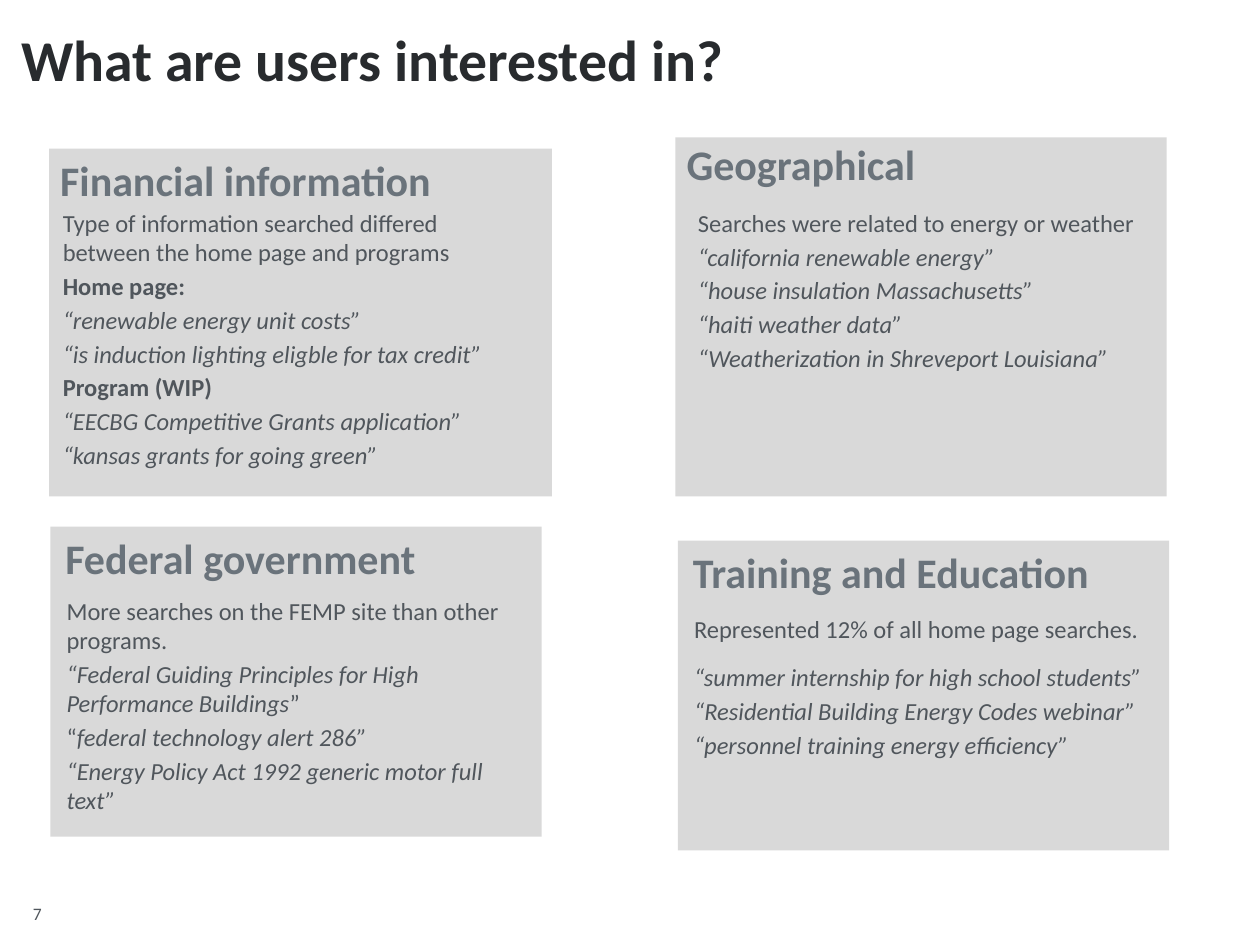
from typing import NamedTuple

from pptx import Presentation
from pptx.dml.color import RGBColor
from pptx.enum.shapes import MSO_SHAPE as Shape
from pptx.enum.text import MSO_ANCHOR as Anchor, PP_ALIGN as Align
from pptx.util import Inches, Pt

FONT = "Calibri"
INK = RGBColor(0x28, 0x2B, 0x2E)
HEADING = RGBColor(0x6A, 0x73, 0x7B)
BODY = RGBColor(0x50, 0x56, 0x5C)
PANEL = RGBColor(0xD9, 0xD9, 0xD9)


class Area(NamedTuple):
    left: float
    top: float
    width: float
    height: float


class Span(NamedTuple):
    text: str
    italic: bool = False


class Line(NamedTuple):
    spans: tuple[Span, ...]
    bold: bool = False
    gap: float = 2.5  # points above the line


class Card(NamedTuple):
    panel: Area
    heading_area: Area
    heading: str
    body_area: Area
    lines: list[Line]


def plain(text: str, bold: bool = False) -> Line:
    return Line((Span(text),), bold)


def query(text: str, gap: float = 2.5) -> Line:
    return Line((Span(f"“{text}”", True),), gap=gap)


def add_text(shapes, area: Area, lines: list[Line], size: float, color: RGBColor):
    box = shapes.add_textbox(*map(Inches, area))
    frame = box.text_frame
    frame.word_wrap = True
    for index, line in enumerate(lines):
        para = frame.paragraphs[0] if index == 0 else frame.add_paragraph()
        if index:
            para.space_before = Pt(line.gap)
        font = para.font
        font.name, font.size, font.bold = FONT, Pt(size), line.bold
        font.color.rgb = color
        for span in line.spans:
            run = para.add_run()
            run.text = span.text
            run.font.italic = span.italic
    return frame


def add_card(page, card: Card) -> None:
    shapes = page.shapes.add_group_shape().shapes
    panel = shapes.add_shape(Shape.RECTANGLE, *map(Inches, card.panel))
    panel.shadow.inherit = False
    panel.fill.solid()
    panel.fill.fore_color.rgb = PANEL
    panel.line.fill.background()
    add_text(shapes, card.heading_area, [plain(card.heading, True)], 24, HEADING)
    add_text(shapes, card.body_area, card.lines, 14, BODY)


CARDS = [
    Card(
        Area(0.39, 1.18, 3.99, 2.76),
        Area(0.38, 1.18, 3.93, 0.64), "Financial information",
        Area(0.4, 1.6, 3.9, 2.57),
        [
            plain("Type of information searched differed between the home page and programs"),
            plain("Home page:", True),
            query("renewable energy unit costs"),
            query("is induction lighting eligble for tax credit"),
            plain("Program (WIP)", True),
            query("EECBG Competitive Grants application"),
            query("kansas grants for going green"),
        ],
    ),
    Card(
        Area(5.36, 1.09, 3.9, 2.85),
        Area(5.35, 1.05, 3.85, 0.55), "Geographical",
        Area(5.44, 1.6, 3.82, 2.12),
        [
            plain("Searches were related to energy or weather"),
            query("california renewable energy"),
            query("house insulation Massachusetts"),
            query("haiti weather data"),
            query("Weatherization in Shreveport Louisiana"),
        ],
    ),
    Card(
        Area(0.4, 4.18, 3.9, 2.46),
        Area(0.42, 4.18, 3.83, 0.77), "Federal government",
        Area(0.43, 4.68, 3.82, 2.07),
        [
            plain("More searches on the FEMP site than other programs."),
            Line((
                Span("“Federal Guiding Principles for High Performance Buildings", True),
                Span("”"),
            )),
            Line((Span("“"), Span("federal technology alert 286”", True))),
            query("Energy Policy Act 1992 generic motor full text"),
        ],
    ),
    Card(
        Area(5.38, 4.29, 3.9, 2.46),
        Area(5.4, 4.29, 3.83, 0.77), "Training and Education",
        Area(5.41, 4.82, 3.82, 1.78),
        [
            plain("Represented 12% of all home page searches."),
            query("summer internship for high school students", gap=11),
            query("Residential Building Energy Codes webinar"),
            query("personnel training energy efficiency"),
        ],
    ),
]


def main() -> None:
    deck = Presentation()
    deck.slide_width, deck.slide_height = Inches(10), Inches(7.5)
    page = deck.slides.add_slide(deck.slide_layouts[6])

    # Page number
    number = add_text(page.shapes, Area(0.05, 7.14, 0.49, 0.26), [plain("7")], 10, BODY)
    number.paragraphs[0].alignment = Align.CENTER
    number.paragraphs[0].line_spacing = 0.9

    # Title
    title = add_text(page.shapes, Area(0.07, -0.08, 9, 1.25),
                     [plain("What are users interested in?", True)], 33, INK)
    title.vertical_anchor = Anchor.MIDDLE
    title.paragraphs[0].line_spacing = Pt(28)

    # Topic cards
    for card in CARDS:
        add_card(page, card)

    deck.save("out.pptx")


if __name__ == "__main__":
    main()
